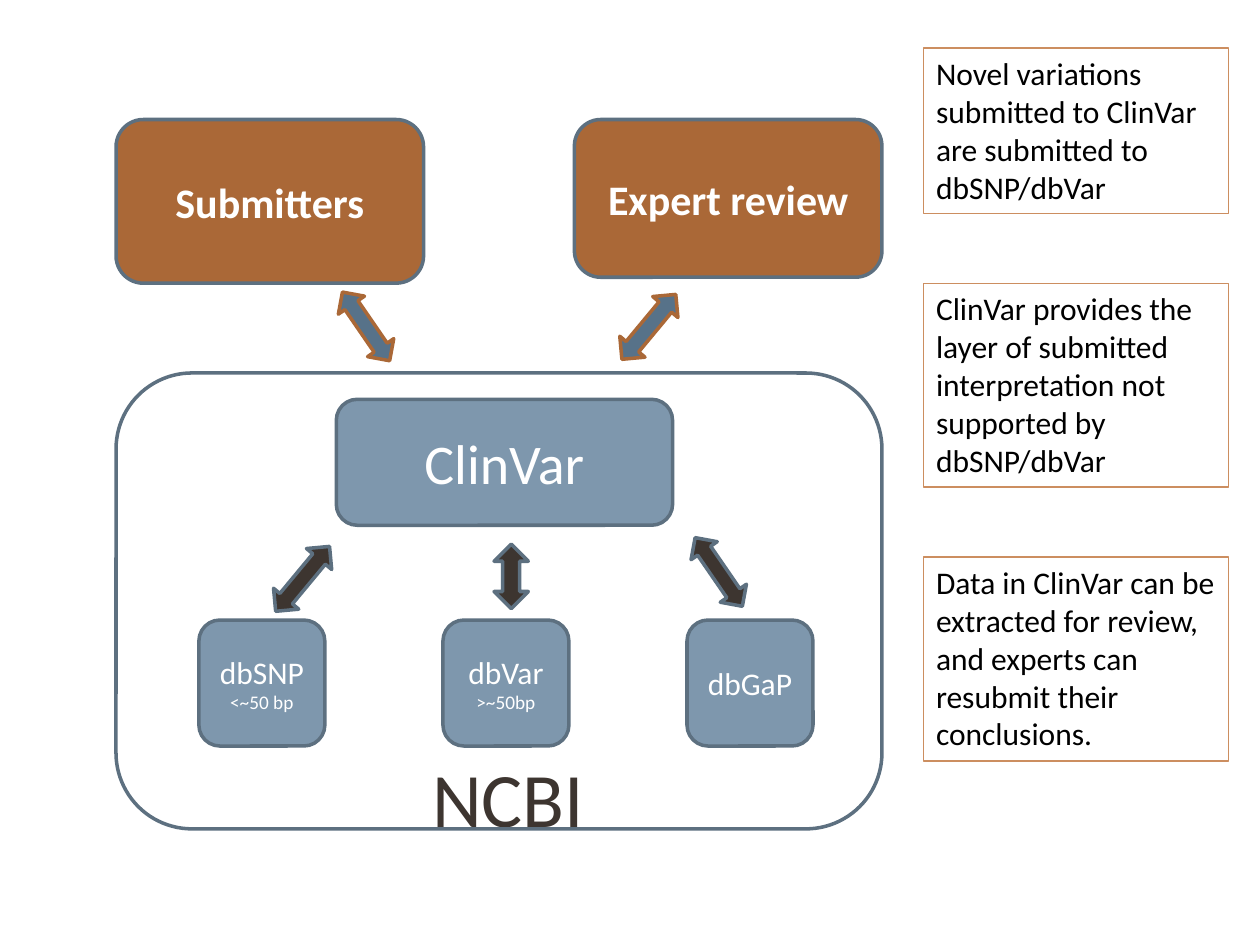
from pptx import Presentation
from pptx import util as u
from pptx.dml.color import RGBColor
from pptx.enum import shapes, text

THEME = {
    "font": "Calibri",
    "white": "FFFFFF", "black": "000000", "dark": "3D3530",
    "slate": "7E97AD", "edge": "5D7080", "steel": "577289",
    "rust": "AA6837", "note_edge": "CC8E60",
    "brand": 44, "hub": 32, "source": 24, "body": 18, "detail": 11,
    "line": 2, "note_line": 0.75,
}

HUB = ("ClinVar", (6.78, 8.05, 6.78, 2.54))
DATABASES = [("dbSNP", "<~50 bp"), ("dbVar", ">~50bp"), ("dbGaP", None)]
SOURCES = [("Submitters", (2.34, 2.41, 6.2, 3.3)),
           ("Expert review", (11.58, 2.41, 6.2, 3.18))]
FRAME = (2.34, 7.52, 15.44, 9.19)
DATABASE_ARROWS = [((5.77, 10.82, 0.66, 1.7), 39.7),
                   ((9.96, 10.97, 0.69, 1.3), 0),
                   ((14.17, 10.69, 0.64, 1.68), 325.5)]
SOURCE_ARROWS = [((12.75, 5.74, 0.66, 1.7), 39.7),
                 ((7.06, 5.74, 0.64, 1.68), 325.5)]
NOTES = [
    ("Novel variations submitted to ClinVar are submitted to dbSNP/dbVar", 3.33),
    ("ClinVar provides the layer of submitted interpretation not supported by dbSNP/dbVar", 4.11),
    ("Data in ClinVar can be extracted for review, and experts can resubmit their conclusions.", 4.11),
]
DATABASE_LEFT, DATABASE_TOP, DATABASE_SIZE, DATABASE_STEP = 4.01, 12.5, 2.54, 4.92
NOTE_LEFT, NOTE_TOP, NOTE_WIDTH, NOTE_GAP = 18.62, 0.97, 6.15, 1.41


def color(name):
    return RGBColor.from_string(THEME[name])


def lengths(box):
    return [u.Cm(value) for value in box]


def add_part(slide, kind, box, fill, edge, line="line"):
    part = slide.shapes.add_shape(kind, *lengths(box))
    part.shadow.inherit = False
    if fill:
        part.fill.solid()
        part.fill.fore_color.rgb = color(fill)
    else:
        part.fill.background()
    part.line.color.rgb = color(edge)
    part.line.width = u.Pt(THEME[line])
    return part


def write(part, lines, ink, align, anchor, bold=False, wrap=True):
    frame = part.text_frame
    frame.word_wrap = wrap
    frame.vertical_anchor = anchor
    frame.text = "\n".join(words for words, _ in lines)
    for paragraph, (_, size) in zip(frame.paragraphs, lines):
        paragraph.alignment = align
        paragraph.font.name = THEME["font"]
        paragraph.font.size = u.Pt(THEME[size])
        paragraph.font.bold = bold
        paragraph.font.color.rgb = color(ink)


def add_node(slide, box, lines, fill, bold=False):
    node = add_part(slide, shapes.MSO_SHAPE.ROUNDED_RECTANGLE, box, fill, "edge")
    write(node, lines, "white", text.PP_ALIGN.CENTER, text.MSO_ANCHOR.MIDDLE, bold)


def add_arrows(slide, arrows, fill, edge):
    for box, angle in arrows:
        arrow = add_part(slide, shapes.MSO_SHAPE.UP_DOWN_ARROW, box, fill, edge)
        arrow.rotation = angle


def add_notes(slide):
    top = NOTE_TOP
    for words, height in NOTES:
        note = add_part(slide, shapes.MSO_SHAPE.RECTANGLE,
                        (NOTE_LEFT, top, NOTE_WIDTH, height),
                        "white", "note_edge", "note_line")
        write(note, [(words, "body")], "black", text.PP_ALIGN.LEFT, text.MSO_ANCHOR.TOP)
        note.text_frame.auto_size = text.MSO_AUTO_SIZE.SHAPE_TO_FIT_TEXT
        top += height + NOTE_GAP


def main():
    deck = Presentation()
    deck.slide_width, deck.slide_height = u.Cm(25.4), u.Cm(19.05)
    slide = deck.slides.add_slide(deck.slide_layouts[6])

    ncbi = slide.shapes.add_textbox(*lengths((8.46, 15.01, 3.61, 2.13)))
    write(ncbi, [("NCBI", "brand")], "dark", text.PP_ALIGN.LEFT,
          text.MSO_ANCHOR.TOP, wrap=False)
    ncbi.text_frame.auto_size = text.MSO_AUTO_SIZE.SHAPE_TO_FIT_TEXT

    hub_name, hub_box = HUB
    add_node(slide, hub_box, [(hub_name, "hub")], "slate")
    for column, (name, detail) in enumerate(DATABASES):
        box = (DATABASE_LEFT + column * DATABASE_STEP, DATABASE_TOP,
               DATABASE_SIZE, DATABASE_SIZE)
        lines = [(name, "body")] + ([(detail, "detail")] if detail else [])
        add_node(slide, box, lines, "slate")

    add_part(slide, shapes.MSO_SHAPE.ROUNDED_RECTANGLE, FRAME, None, "edge")
    add_arrows(slide, DATABASE_ARROWS, "dark", "edge")
    for name, box in SOURCES:
        add_node(slide, box, [(name, "source")], "rust", bold=True)
    add_arrows(slide, SOURCE_ARROWS, "steel", "rust")
    add_notes(slide)

    deck.save("out.pptx")


if __name__ == "__main__":
    main()
